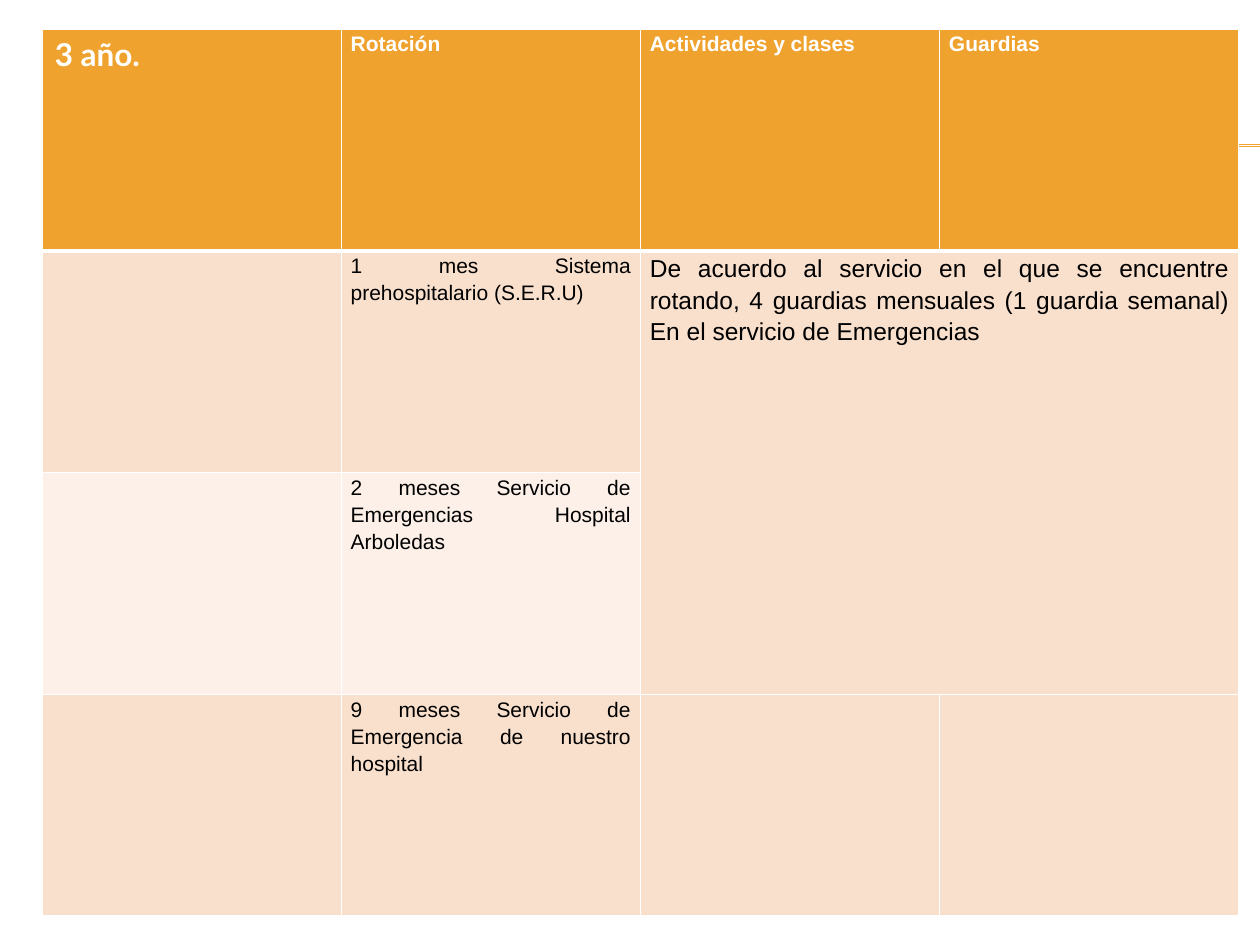
"""Build the third-year rotation table slide."""
from lxml import etree
from pptx import Presentation
from pptx.dml.color import RGBColor
from pptx.enum.shapes import MSO_CONNECTOR
from pptx.enum.text import PP_ALIGN
from pptx.oxml.ns import qn
from pptx.util import Cm, Pt

STRAIGHT = MSO_CONNECTOR.STRAIGHT
JUSTIFY = PP_ALIGN.JUSTIFY
ORANGE = RGBColor(0xF0, 0xA2, 0x2E)
PEACH = RGBColor(0xF9, 0xE0, 0xCD)
CREAM = RGBColor(0xFC, 0xF0, 0xE8)
WHITE = RGBColor(0xFF, 0xFF, 0xFF)
BLACK = RGBColor(0, 0, 0)

FILLS = [ORANGE, PEACH, CREAM, PEACH]
ROWS = [
    ["3 año.", "Rotación", "Actividades y clases", "Guardias"],
    ["", "1 mes Sistema prehospitalario (S.E.R.U)",
     "De acuerdo al servicio en el que se encuentre rotando, 4 guardias "
     "mensuales (1 guardia semanal) En el servicio de Emergencias", ""],
    ["", "2 meses Servicio de Emergencias Hospital Arboledas", "", ""],
    ["", "9 meses Servicio de Emergencia de nuestro hospital", "", ""],
]


def add_edge(cell, pos, side, width):
    edge = etree.Element(qn("a:ln" + side), w=str(Pt(width)))
    fill = etree.SubElement(edge, qn("a:solidFill"))
    etree.SubElement(fill, qn("a:srgbClr"), val=str(WHITE))
    cell._tc.get_or_add_tcPr().insert(pos, edge)


def add_text(cell, text, size, font, color, bold):
    run = cell.text_frame.paragraphs[0].add_run()
    run.text = text
    run.font.size = Pt(size)
    run.font.name = font
    run.font.color.rgb = color
    run.font.bold = bold


deck = Presentation()
deck.slide_width, deck.slide_height = Cm(25.4), Cm(19.05)
slide = deck.slides.add_slide(deck.slide_layouts[6])

for y in (2.92, 2.95):
    rule = slide.shapes.add_connector(STRAIGHT, Cm(1.42), Cm(y), Cm(25.4), Cm(y))
    rule.line.color.rgb = ORANGE
    rule.line.width = Pt(0.75)
    etree.SubElement(rule._element.spPr, qn("a:effectLst"))

table = slide.shapes.add_table(
    4, 4, Cm(0.85), Cm(0.59), Cm(24.12), Cm(17.88)).table
for col in table.columns:
    col.width = Cm(6.03)
for row in table.rows:
    row.height = Cm(4.47)
table.cell(1, 2).merge(table.cell(2, 3))

for r, texts in enumerate(ROWS):
    for c, text in enumerate(texts):
        cell = table.cell(r, c)
        cell.fill.solid()
        cell.fill.fore_color.rgb = PEACH if c > 1 and r else FILLS[r]
        widths = {"L": 1, "R": 1, "T": 3 if r == 1 else 1, "B": 1 if r else 3}
        for pos, (side, width) in enumerate(widths.items()):
            add_edge(cell, pos, side, width)
        if not text:
            continue
        if r == c == 0:
            add_text(cell, text, 18, "Lato", WHITE, True)
            continue
        cell.margin_left = cell.margin_right = Cm(0.19)
        cell.margin_top = cell.margin_bottom = 0
        para = cell.text_frame.paragraphs[0]
        para.alignment = JUSTIFY
        para.line_spacing = 1.15
        size = 14 if cell.is_merge_origin else 12
        add_text(cell, text, size, "Arial", BLACK if r else WHITE, r == 0)

deck.save("out.pptx")
